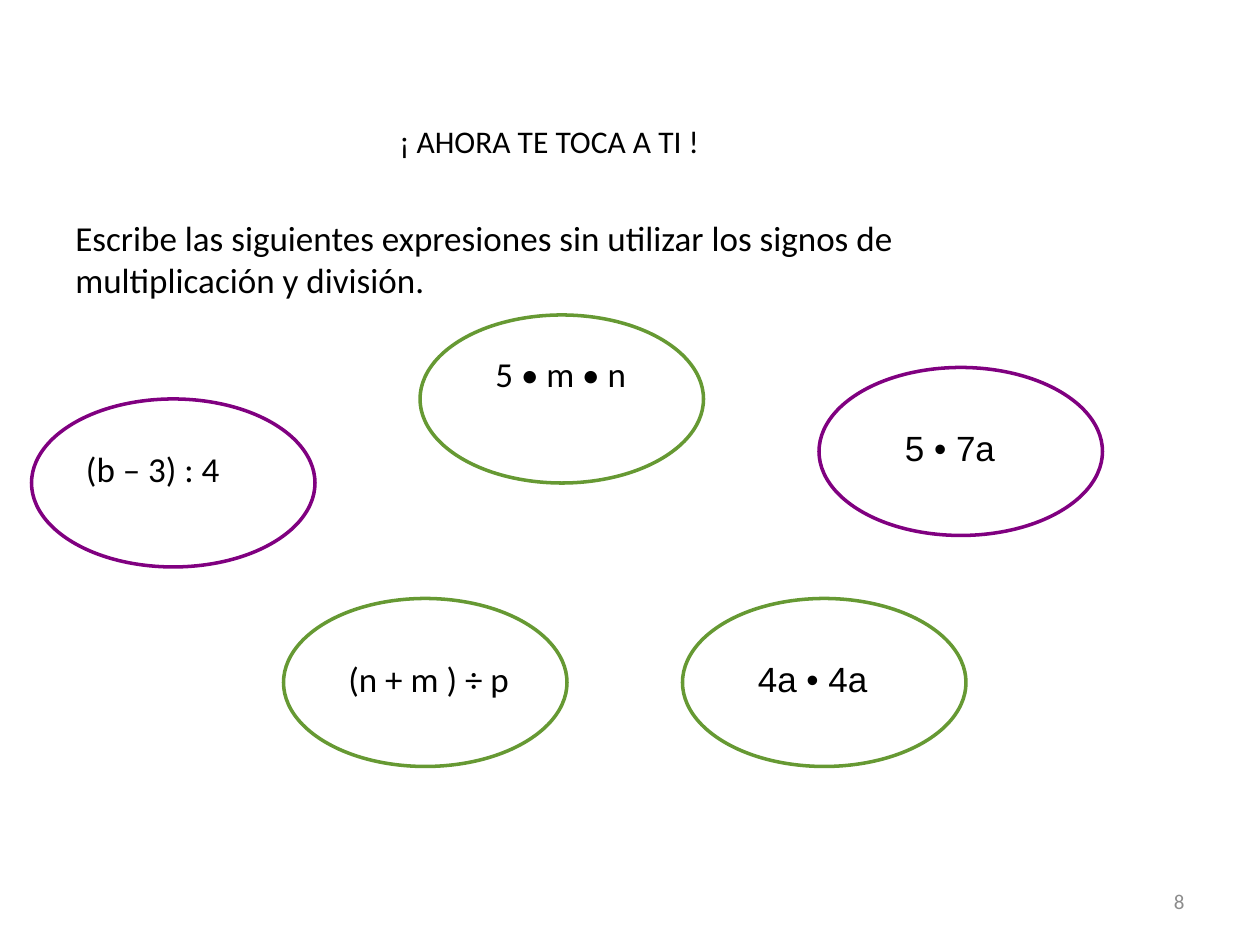
import dataclasses

import pptx
import pptx.dml.color
import pptx.enum.shapes
import pptx.enum.text
import pptx.util

Pt = pptx.util.Pt
Align = pptx.enum.text.PP_ALIGN
Anchor = pptx.enum.text.MSO_ANCHOR

COLOURS = {"text": "000000", "number": "8C8C8C", "purple": "800080", "green": "669933"}
OVAL_WIDTH, OVAL_HEIGHT = 162, 96
LABEL_HEIGHT = 31


@dataclasses.dataclass(frozen=True)
class Expression:
    text: str
    left: float
    top: float
    colour: str
    indent: float
    drop: float
    label_width: float
    font: str = "Calibri"


EXPRESSIONS = [
    Expression("(b – 3) : 4", 18, 228, "purple", 24, 24, 162),
    Expression("(n + m ) ÷ p", 162, 342, "green", 30, 30, 216),
    Expression("5 • m • n", 240, 180, "green", 36, 18, 246),
    Expression("4a • 4a", 390, 342, "green", 36, 30, 216, "Arial"),
    Expression("5 • 7a", 468, 210, "purple", 42, 30, 144, "Arial"),
]


def colour_of(name: str) -> pptx.dml.color.RGBColor:
    return pptx.dml.color.RGBColor.from_string(COLOURS[name])


def write_text(box, text: str, *, size: float = 20, font: str = "Calibri",
               colour: str = "text", align=Align.LEFT, anchor=Anchor.TOP) -> None:
    frame = box.text_frame
    frame.word_wrap = True
    frame.auto_size = pptx.enum.text.MSO_AUTO_SIZE.NONE
    frame.vertical_anchor = anchor
    para = frame.paragraphs[0]
    para.alignment = align
    span = para.add_run()
    span.text = text
    span.font.size = Pt(size)
    span.font.name = font
    span.font.color.rgb = colour_of(colour)


def add_text(shapes, text: str, left: float, top: float, width: float,
             height: float, **style) -> None:
    box = shapes.add_textbox(Pt(left), Pt(top), Pt(width), Pt(height))
    write_text(box, text, **style)


def add_expression(page, item: Expression) -> None:
    group = page.shapes.add_group_shape()
    add_text(group.shapes, item.text, item.left + item.indent, item.top + item.drop,
             item.label_width, LABEL_HEIGHT, font=item.font)
    oval = group.shapes.add_shape(
        pptx.enum.shapes.MSO_SHAPE.OVAL,
        Pt(item.left), Pt(item.top), Pt(OVAL_WIDTH), Pt(OVAL_HEIGHT))
    oval.shadow.inherit = False
    oval.fill.background()
    oval.line.color.rgb = colour_of(item.colour)
    oval.line.width = Pt(2)


def main() -> None:
    deck = pptx.Presentation()
    deck.slide_width, deck.slide_height = Pt(720), Pt(540)
    page = deck.slides.add_slide(deck.slide_layouts.get_by_name("Title Only"))

    title = page.shapes.title
    title.left, title.top, title.width, title.height = Pt(221), Pt(66), Pt(294), Pt(36)
    write_text(title, "¡ AHORA TE TOCA A TI !", size=18)
    add_text(page.shapes,
             "Escribe las siguientes expresiones sin utilizar los signos de "
             "multiplicación y división.", 36, 120, 570, 56)

    for item in EXPRESSIONS:
        add_expression(page, item)

    add_text(page.shapes, "8", 516, 500.5, 168, 28.75, size=12, colour="number",
             align=Align.RIGHT, anchor=Anchor.MIDDLE)
    deck.save("out.pptx")


if __name__ == "__main__":
    main()
